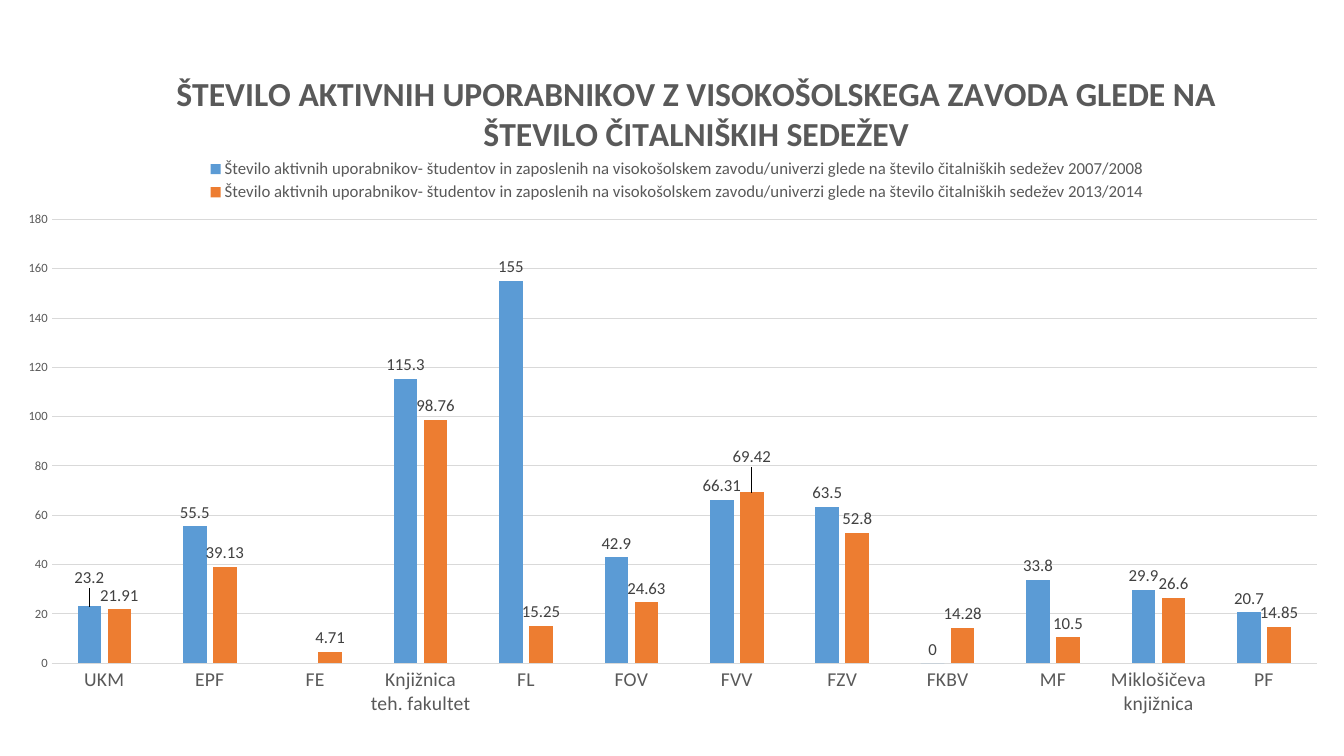
"""Build a slide with a clustered column chart of library users per reading-room seat."""
from lxml import etree
from pptx import Presentation
from pptx.chart.data import CategoryChartData
from pptx.dml.color import RGBColor
from pptx.enum import chart as kinds
from pptx.oxml import ns
from pptx.util import Inches, Pt

TITLE = "ŠTEVILO AKTIVNIH UPORABNIKOV Z VISOKOŠOLSKEGA ZAVODA GLEDE NA ŠTEVILO ČITALNIŠKIH SEDEŽEV"
MEASURE = ("Število aktivnih uporabnikov- študentov in zaposlenih na visokošolskem "
           "zavodu/univerzi glede na število čitalniških sedežev")
LIBRARIES = ["UKM", "EPF", "FE", "Knjižnica teh. fakultet", "FL", "FOV", "FVV", "FZV",
             "FKBV", "MF", "Miklošičeva knjižnica", "PF"]
YEARS = [
    {"year": "2007/2008", "color": "5B9BD5", "raised": (0, -0.02),
     "values": [23.2, 55.5, None, 115.3, 155, 42.9, 66.31, 63.5, 0, 33.8, 29.9, 20.7]},
    {"year": "2013/2014", "color": "ED7D31", "raised": (6, -0.03),
     "values": [21.91, 39.13, 4.71, 98.76, 15.25, 24.63, 69.42, 52.8, 14.28, 10.5, 26.6, 14.85]},
]
GREY, PALE, DARK = "595959", "D9D9D9", "404040"


def rgb(code):
    return RGBColor.from_string(code)


def style(font, size, color, bold=False):
    for name, value in {"name": "Calibri", "size": Pt(size), "bold": bold}.items():
        setattr(font, name, value)
    font.color.rgb = rgb(color)


def draw_line(line, color):
    line.width = Pt(0.75)
    line.color.rgb = rgb(color)


def place(parent, index, **settings):
    """Give a chart part a manual layout, as fractions of the chart."""
    layout = parent.find(ns.qn("c:layout"))
    if layout is None:
        layout = etree.Element(ns.qn("c:layout"))
        parent.insert(index, layout)
    manual = etree.SubElement(layout, ns.qn("c:manualLayout"))
    for name, value in settings.items():
        etree.SubElement(manual, ns.qn(f"c:{name}")).set("val", str(value))


def add_title(chart):
    chart.has_title = True
    title = chart.chart_title
    title.include_in_layout = False
    para = title.text_frame.paragraphs[0]
    span = para.add_run()
    span.text = TITLE
    style(span.font, 24, GREY, bold=True)
    place(title._element, 1, xMode="edge", yMode="edge", x=0.12, y=0.04)


def add_legend(chart):
    chart.has_legend = True
    legend = chart.legend
    legend.position = kinds.XL_LEGEND_POSITION.BOTTOM
    legend.include_in_layout = False
    style(legend.font, 12, GREY)
    place(legend._element, 1, xMode="edge", yMode="edge", x=0.14, y=0.17, w=0.73, h=0.07)


def format_axes(chart):
    for axis, size in ((chart.category_axis, 14), (chart.value_axis, 9)):
        axis.major_tick_mark = axis.minor_tick_mark = kinds.XL_TICK_MARK.NONE
        style(axis.tick_labels.font, size, GREY)
    draw_line(chart.category_axis.format.line, PALE)
    values = chart.value_axis
    values.minimum_scale, values.maximum_scale, values.major_unit = 0, 180, 20
    values.format.line.fill.background()
    values.has_major_gridlines = True
    draw_line(values.major_gridlines.format.line, PALE)


def format_series(series, year):
    series.format.fill.solid()
    series.format.fill.fore_color.rgb = rgb(year["color"])
    series.invert_if_negative = False
    labels = series.data_labels
    labels.show_value = True
    index, shift = year["raised"]
    raised = series.points[index].data_label
    for label in (labels, raised):
        label.position = kinds.XL_LABEL_POSITION.OUTSIDE_END
        style(label.font, 12, DARK)
    place(raised._get_or_add_dLbl(), 1, x=0, y=shift)


def main():
    deck = Presentation()
    deck.slide_width, deck.slide_height = Inches(13.33), Inches(7.5)
    page = deck.slides.add_slide(deck.slide_layouts[6])
    data = CategoryChartData()
    data.categories = LIBRARIES
    for year in YEARS:
        data.add_series(f"{MEASURE} {year['year']}", year["values"])
    box = [Inches(length) for length in (0.12, 0.36, 13.07, 6.99)]
    chart = page.shapes.add_chart(kinds.XL_CHART_TYPE.COLUMN_CLUSTERED, *box, data).chart
    style(chart.font, 10, "000000")
    add_title(chart)
    add_legend(chart)
    format_axes(chart)
    plot = chart.plots[0]
    plot.gap_width, plot.overlap, plot.vary_by_categories = 219, -27, False
    for series, year in zip(plot.series, YEARS):
        format_series(series, year)
    place(plot._element.getparent(), 0, layoutTarget="inner", xMode="edge", yMode="edge",
          x=0.03, y=0.26, w=0.96, h=0.63)
    deck.save("out.pptx")


if __name__ == "__main__":
    main()
